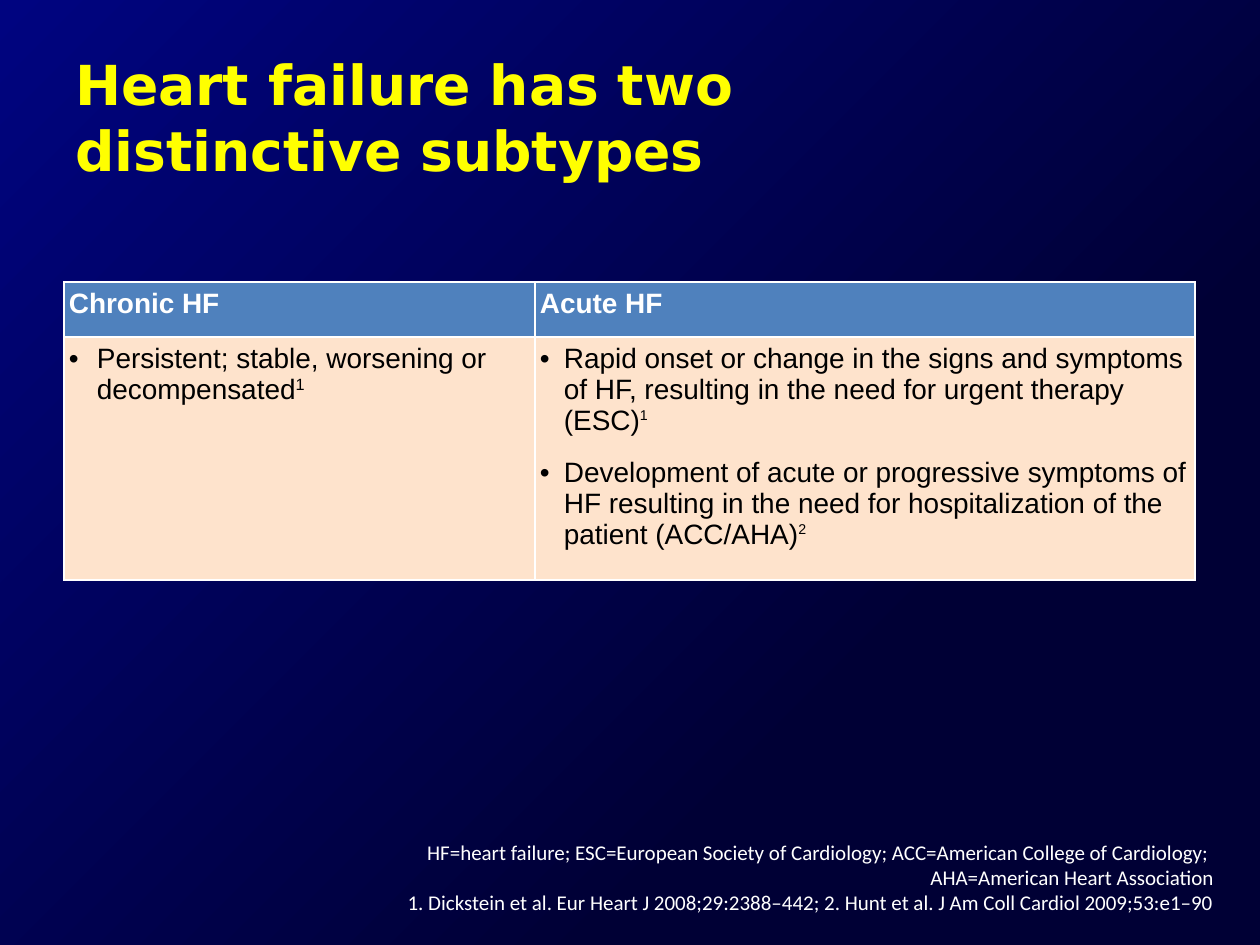
from pptx import Presentation
from pptx.dml.color import RGBColor
from pptx.enum.shapes import MSO_SHAPE
from pptx.enum.text import MSO_ANCHOR, MSO_AUTO_SIZE, PP_ALIGN
from pptx.oxml import parse_xml
from pptx.oxml.ns import nsdecls
from pptx.util import Pt

RECT = MSO_SHAPE.RECTANGLE
TOP, MIDDLE, BOTTOM = MSO_ANCHOR.TOP, MSO_ANCHOR.MIDDLE, MSO_ANCHOR.BOTTOM
LEFT, RIGHT = PP_ALIGN.LEFT, PP_ALIGN.RIGHT
GROW = MSO_AUTO_SIZE.SHAPE_TO_FIT_TEXT

WHITE = RGBColor(255, 255, 255)
BLACK = RGBColor(0, 0, 0)
YELLOW = RGBColor(255, 255, 0)
NAVY = RGBColor(0, 0, 0x35)
BLUE = RGBColor(0, 0x04, 0x80)
HEAD = RGBColor(0x4F, 0x81, 0xBD)
PEACH = RGBColor(0xFE, 0xE3, 0xCC)

HEADS = ["Chronic HF", "Acute HF"]
# Per column: bullet indent, then (text, note mark, mark size, mark rise)
BODIES = [
    (28, [("Persistent; stable, worsening or decompensated", "1", 16, 30)]),
    (24, [
        ("Rapid onset or change in the signs and symptoms of HF, "
         "resulting in the need for urgent therapy (ESC)", "1", 14, 40),
        ("Development of acute or progressive symptoms of HF resulting "
         "in the need for hospitalization of the patient (ACC/AHA)",
         "2", 14, 40),
    ]),
]
NOTES = [
    "HF=heart failure; ESC=European Society of Cardiology; "
    "ACC=American College of Cardiology; \vAHA=American Heart Association",
    "1. Dickstein et al. Eur Heart J 2008;29:2388–442; "
    "2. Hunt et al. J Am Coll Cardiol 2009;53:e1–90",
]


def px(n):
    return n * 914400 // 126


def style(para, face, size, color, bold=False):
    font = para.font
    font.name, font.size, font.bold = face, Pt(size), bold
    font.color.rgb = color


def add_back(slide):
    """Radial gradient, dark at the bottom right corner."""
    back = slide.shapes.add_shape(RECT, 0, 0, px(1260), px(945))
    back.shadow.inherit = False
    back.line.fill.background()
    back.fill.gradient()
    for stop, pos, color in zip(back.fill.gradient_stops, (0.3, 1), (NAVY, BLUE)):
        stop.position = pos
        stop.color.rgb = color
    line = back.element.spPr.find(".//{*}lin")
    line.getparent().replace(line, parse_xml(
        f'<a:path {nsdecls("a")} path="circle">'
        '<a:fillToRect l="100000" t="100000"/></a:path>'))


def add_text(slide, box, lines, face, size, color, bold=False,
             align=LEFT, anchor=MIDDLE):
    shape = slide.shapes.add_textbox(*map(px, box))
    frame = shape.text_frame
    frame.word_wrap = True
    frame.vertical_anchor = anchor
    for i, line in enumerate(lines):
        para = frame.add_paragraph() if i else frame.paragraphs[0]
        para.text = line
        para.alignment = align
        style(para, face, size, color, bold)
    return frame


def set_cell(cell, fill):
    cell.margin_left = px(5)
    cell.margin_right = cell.margin_top = cell.margin_bottom = px(6)
    cell.vertical_anchor = TOP
    props = cell._tc.get_or_add_tcPr()
    for side in ("lnL", "lnR", "lnT", "lnB"):
        props.append(parse_xml(
            f'<a:{side} {nsdecls("a")} w="12700"><a:solidFill>'
            f'<a:srgbClr val="{WHITE}"/></a:solidFill></a:{side}>'))
    cell.fill.solid()
    cell.fill.fore_color.rgb = fill


def add_point(para, indent, text, mark, size, rise):
    props = para._p.get_or_add_pPr()
    props.set("marL", str(px(indent)))
    props.set("indent", str(-px(indent)))
    props.append(parse_xml(f'<a:buFont {nsdecls("a")} typeface="Arial"/>'))
    props.append(parse_xml(f'<a:buChar {nsdecls("a")} char="•"/>'))
    para.space_after = Pt(6)
    style(para, "Arial", 16, BLACK)
    para.add_run().text = text
    note = para.add_run()
    note.text = mark
    note.font.size = Pt(size)
    note._r.get_or_add_rPr().set("baseline", str(rise * 1000))


def add_grid(slide):
    box = map(px, (64, 282, 1131, 298))
    table = slide.shapes.add_table(2, 2, *box).table
    for col, wide in zip(table.columns, (471, 660)):
        col.width = px(wide)
    for row, high in zip(table.rows, (55, 243)):
        row.height = px(high)
    for c, (head, (indent, points)) in enumerate(zip(HEADS, BODIES)):
        # Heading
        cell = table.cell(0, c)
        set_cell(cell, HEAD)
        para = cell.text_frame.paragraphs[0]
        para.text = head
        style(para, "Arial", 16, WHITE, True)
        # Bullets
        cell = table.cell(1, c)
        set_cell(cell, PEACH)
        frame = cell.text_frame
        for i, point in enumerate(points):
            para = frame.add_paragraph() if i else frame.paragraphs[0]
            add_point(para, indent, *point)
            if i:
                para.space_before = Pt(6)


def main():
    deck = Presentation()
    deck.slide_width, deck.slide_height = px(1260), px(945)
    slide = deck.slides.add_slide(deck.slide_layouts[6])
    add_back(slide)
    # Title
    add_text(slide, (63, 38, 1022, 157),
             ["Heart failure has two distinctive subtypes"],
             "DejaVu Sans", 31.5, YELLOW, True)
    add_grid(slide)
    # Abbreviations and references
    notes = add_text(slide, (244, 838, 985, 92), NOTES, "Calibri", 12, WHITE,
                     align=RIGHT, anchor=BOTTOM)
    notes.margin_left = notes.margin_top = 0
    notes.margin_right = notes.margin_bottom = px(15)
    notes.auto_size = GROW
    deck.save("out.pptx")


if __name__ == "__main__":
    main()
